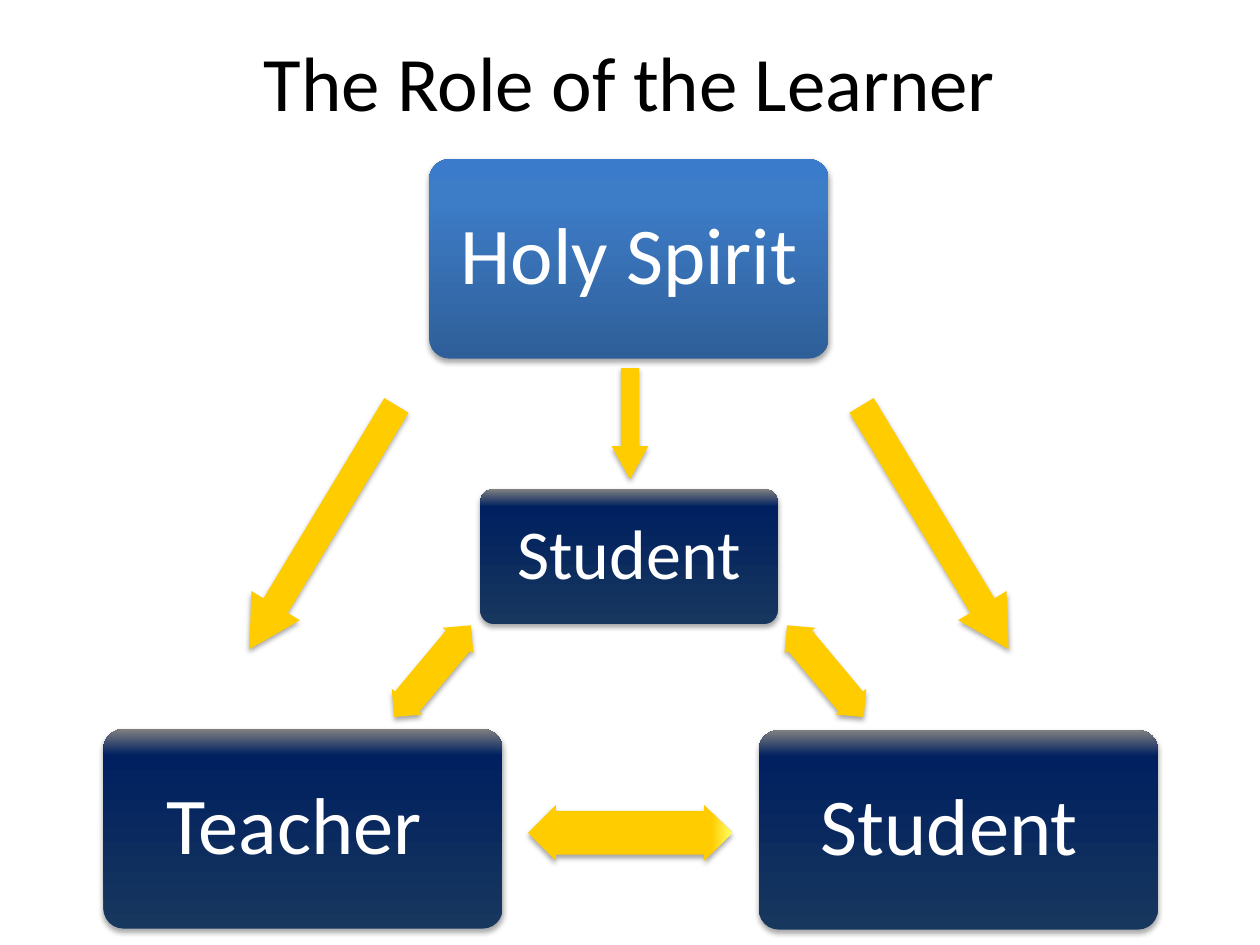
import pptx
import pptx.dml.color
import pptx.enum.shapes
import pptx.enum.text
import pptx.oxml
import pptx.oxml.ns
import pptx.util

Cm = pptx.util.Cm
Pt = pptx.util.Pt
RGBColor = pptx.dml.color.RGBColor
Shape = pptx.enum.shapes.MSO_SHAPE

BLACK = RGBColor(0x00, 0x00, 0x00)
WHITE = RGBColor(0xFF, 0xFF, 0xFF)
GOLD = RGBColor(0xFF, 0xCC, 0x00)
YELLOW = RGBColor(0xFF, 0xFF, 0x66)
SPIRIT_DARK = RGBColor(0x2F, 0x5F, 0x99)
SPIRIT_MID = RGBColor(0x3D, 0x7C, 0xC7)
SPIRIT_LIGHT = RGBColor(0x3A, 0x7C, 0xCB)
NAVY_DARK = RGBColor(0x17, 0x37, 0x5E)
NAVY = RGBColor(0x00, 0x20, 0x60)
GREY = RGBColor(0x80, 0x80, 0x80)

SPIRIT_FILL = [(0, SPIRIT_DARK), (80, SPIRIT_MID), (100, SPIRIT_LIGHT)]
PERSON_FILL = [(0, NAVY_DARK), (87, NAVY), (100, GREY)]
ARROW_FILL = [(0, GOLD)]
GLOW_FILL = [(3, GOLD), (90, GOLD), (100, YELLOW)]

NAMESPACE = pptx.oxml.ns.nsdecls("a")
AXIS = 12.68


class DiagramSlide:
    font = "Calibri"

    def __init__(self, presentation):
        self.slide = presentation.slides.add_slide(presentation.slide_layouts[6])

    def set_text(self, shape, text, size, color, inset, line_spacing=1):
        frame = shape.text_frame
        frame.word_wrap = True
        frame.vertical_anchor = pptx.enum.text.MSO_ANCHOR.MIDDLE
        frame.margin_left = frame.margin_right = Cm(inset)
        frame.margin_top = frame.margin_bottom = Cm(inset)
        paragraph = frame.paragraphs[0]
        paragraph.alignment = pptx.enum.text.PP_ALIGN.CENTER
        paragraph.line_spacing = line_spacing
        run = paragraph.add_run()
        run.text = text
        run.font.name = self.font
        run.font.size = Pt(size)
        run.font.color.rgb = color

    def paint(self, shape, stops):
        if len(stops) == 1:
            shape.fill.solid()
            shape.fill.fore_color.rgb = stops[0][1]
            return
        shape.fill.gradient()
        shape.fill.gradient_angle = 90
        stop_list = shape.element.spPr.find(".//" + pptx.oxml.ns.qn("a:gsLst"))
        for stop in list(stop_list):
            stop_list.remove(stop)
        for position, color in stops:
            stop_list.append(pptx.oxml.parse_xml(
                f'<a:gs {NAMESPACE} pos="{position * 1000}">'
                f'<a:srgbClr val="{color}"/></a:gs>'))

    def add_shape(self, kind, center, size, stops, adjustments, rotation=0):
        (x, y), (width, height) = center, size
        shape = self.slide.shapes.add_shape(
            kind, Cm(x - width / 2), Cm(y - height / 2), Cm(width), Cm(height))
        for index, value in enumerate(adjustments):
            shape.adjustments[index] = value
        shape.rotation = rotation
        self.paint(shape, stops)
        shape.line.fill.background()
        shape.shadow.inherit = False
        effects = shape.element.spPr.find(pptx.oxml.ns.qn("a:effectLst"))
        effects.append(pptx.oxml.parse_xml(
            f'<a:outerShdw {NAMESPACE} blurRad="{Pt(3.1)}" dist="{Pt(1.8)}" '
            'dir="5400000" rotWithShape="0"><a:srgbClr val="000000">'
            '<a:alpha val="35000"/></a:srgbClr></a:outerShdw>'))
        return shape

    def add_title(self, text):
        box = self.slide.shapes.add_textbox(Cm(1.27), Cm(0.03), Cm(22.86), Cm(3.18))
        self.set_text(box, text, 44, BLACK, 0.13)

    def add_box(self, text, center, stops=PERSON_FILL, size=(8.05, 4.02), font_size=46):
        box = self.add_shape(Shape.ROUNDED_RECTANGLE, center, size, stops, [0.1])
        self.set_text(box, text, font_size, WHITE, 0.48, 0.9)

    def add_arrow(self, kind, center, size, rotation, stops=ARROW_FILL):
        self.add_shape(kind, center, size, stops, [0.5, 0.9], rotation)

    def add_double_arrow(self, center, size, rotation, stops=ARROW_FILL):
        self.add_shape(Shape.UP_DOWN_ARROW, center, size, stops, [0.5, 0.786], rotation)


def main():
    presentation = pptx.Presentation()
    presentation.slide_width = Cm(25.4)
    presentation.slide_height = Cm(19.05)
    diagram = DiagramSlide(presentation)

    diagram.add_title("The Role of the Learner")
    diagram.add_box("Holy Spirit", (AXIS, 5.22), SPIRIT_FILL)
    diagram.add_box("Student ", (19.32, 16.73))
    diagram.add_box("Student", (AXIS, 11.22), size=(6, 2.72), font_size=40)
    diagram.add_box("Teacher ", (6.11, 16.71))

    diagram.add_arrow(Shape.LEFT_ARROW, (12.7, 8.54), (2.24, 0.74), 270)
    diagram.add_double_arrow((12.7, 16.79), (1.12, 4.11), 90, GLOW_FILL)
    for side, kind in ((-1, Shape.LEFT_ARROW), (1, Shape.RIGHT_ARROW)):
        diagram.add_arrow(kind, (AXIS + side * 6.17, 10.63), (5.74, 1.14), side * 58.9 % 360)
        diagram.add_double_arrow((AXIS + side * 3.96, 13.53), (0.81, 2.41), -side * 39.9 % 360)

    presentation.save("out.pptx")


if __name__ == "__main__":
    main()
